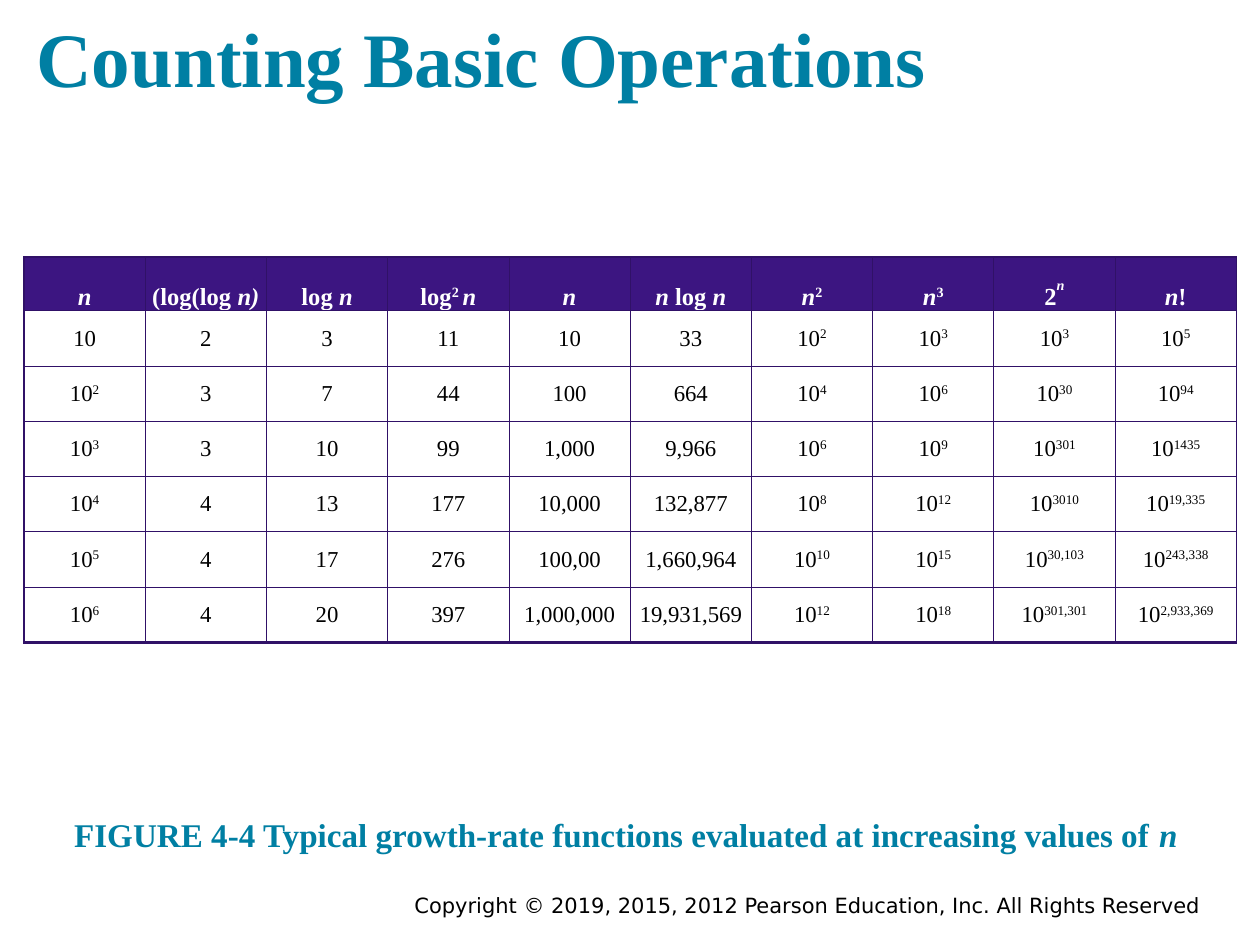
"""Build a slide with a table of growth-rate functions."""
from dataclasses import dataclass
from typing import Any, NamedTuple

from lxml import etree
from pptx import Presentation
from pptx import util as u
from pptx.dml.color import RGBColor
from pptx.enum import text
from pptx.oxml import ns


@dataclass(frozen=True)
class Theme:
    serif: str = "Times New Roman"
    sans: str = "DejaVu Sans"
    heading: str = "007FA3"
    ink: str = "000000"
    header_text: str = "FFFFFF"
    header_fill: str = "3C1581"
    border: str = "301167"
    title_size: float = 44
    caption_size: float = 18.9
    copyright_size: float = 12
    header_size: float = 14
    body_size: float = 13
    raised: int = 32
    raised_high: int = 61


class Piece(NamedTuple):
    text: str
    italic: bool = False
    raised: int = 0


class Style(NamedTuple):
    name: str
    size: float
    color: str
    bold: bool = False


@dataclass(frozen=True)
class Label:
    pieces: list[Piece]
    box: tuple[float, float, float, float]
    style: Style
    frame_format: dict[str, Any]
    inset: float
    alignment: text.PP_ALIGN = text.PP_ALIGN.LEFT


THEME = Theme()
HEADING = {"vertical_anchor": text.MSO_ANCHOR.BOTTOM, "auto_size": text.MSO_AUTO_SIZE.NONE}
GROWING = {"vertical_anchor": text.MSO_ANCHOR.TOP, "auto_size": text.MSO_AUTO_SIZE.SHAPE_TO_FIT_TEXT}
N = Piece("n", True)

LABELS = [
    Label([Piece("Copyright © 2019, 2015, 2012 Pearson Education, Inc. All Rights Reserved")],
          (126, 506.2, 563.8, 22.3), Style(THEME.sans, THEME.copyright_size, THEME.ink),
          GROWING, 3.6, text.PP_ALIGN.RIGHT),
    Label([Piece("Counting Basic Operations")], (13.7, 0, 670.3, 66.2),
          Style(THEME.serif, THEME.title_size, THEME.heading, True), HEADING, 7.2),
    Label([Piece("FIGURE 4-4 Typical growth-rate functions evaluated at increasing values of "), N],
          (35.3, 449.3, 648, 46.1),
          Style(THEME.serif, THEME.caption_size, THEME.heading, True), HEADING, 7.2),
]

HEADER = [
    [N],
    [Piece("(log(log "), Piece("n)", True)],
    [Piece("log "), N],
    [Piece("log"), Piece("2 ", raised=THEME.raised), N],
    [N],
    [Piece("n ", True), Piece("log "), N],
    [N, Piece("2", raised=THEME.raised)],
    [N, Piece("3", raised=THEME.raised)],
    [Piece("2"), Piece("n", True, THEME.raised_high)],
    [N, Piece("!")],
]

BODY = [
    "10 2 3 11 10 33 10^2 10^3 10^3 10^5",
    "10^2 3 7 44 100 664 10^4 10^6 10^30 10^94",
    "10^3 3 10 99 1,000 9,966 10^6 10^9 10^301 10^1435",
    "10^4 4 13 177 10,000 132,877 10^8 10^12 10^3010 10^19,335",
    "10^5 4 17 276 100,00 1,660,964 10^10 10^15 10^30,103 10^243,338",
    "10^6 4 20 397 1,000,000 19,931,569 10^12 10^18 10^301,301 10^2,933,369",
]

TABLE_LEFT, TABLE_TOP = 13.7, 146.9
COLUMN_WIDTH, HEADER_HEIGHT, ROW_HEIGHT = 69.3, 30.7, 31.6


def apply(target: Any, values: dict[str, Any]) -> None:
    """Set each named attribute on the target."""
    for name, value in values.items():
        setattr(target, name, value)


def margins(inset: float) -> dict[str, Any]:
    """Return equal margins for all four sides."""
    return {f"margin_{side}": u.Pt(inset) for side in ("left", "top", "right", "bottom")}


def write(paragraph: Any, pieces: list[Piece], style: Style, alignment: text.PP_ALIGN) -> None:
    """Write styled pieces into a paragraph."""
    paragraph.alignment = alignment
    for piece in pieces:
        run = paragraph.add_run()
        run.text = piece.text
        apply(run.font, {"name": style.name, "size": u.Pt(style.size),
                         "bold": style.bold, "italic": piece.italic})
        run.font.color.rgb = RGBColor.from_string(style.color)
        if piece.raised:
            run.font._element.set("baseline", str(piece.raised * 1000))


def add_label(slide: Any, label: Label) -> None:
    """Add a text box to the slide."""
    frame = slide.shapes.add_textbox(*map(u.Pt, label.box)).text_frame
    apply(frame, {"word_wrap": True, **label.frame_format, **margins(label.inset)})
    write(frame.paragraphs[0], label.pieces, label.style, label.alignment)


def set_borders(cell: Any, widths: dict[str, float]) -> None:
    """Draw solid cell borders with the given widths."""
    properties = cell._tc.get_or_add_tcPr()
    for side, width in widths.items():
        line = etree.SubElement(properties, ns.qn(f"a:ln{side}"), w=str(u.Pt(width)))
        fill = etree.SubElement(line, ns.qn("a:solidFill"))
        etree.SubElement(fill, ns.qn("a:srgbClr"), val=THEME.border)


def parse_value(value: str) -> list[Piece]:
    """Split a value into its base and raised exponent."""
    base, _, exponent = value.partition("^")
    return [Piece(base)] + ([Piece(exponent, raised=THEME.raised)] if exponent else [])


def add_growth_table(slide: Any) -> None:
    """Add the table of growth rates."""
    rows = [HEADER] + [[parse_value(value) for value in line.split()] for line in BODY]
    last_row, last_column = len(rows) - 1, len(HEADER) - 1
    heights = [HEADER_HEIGHT] + [ROW_HEIGHT] * len(BODY)
    table = slide.shapes.add_table(
        len(rows), len(HEADER), u.Pt(TABLE_LEFT), u.Pt(TABLE_TOP),
        u.Pt(COLUMN_WIDTH * len(HEADER)), u.Pt(sum(heights))).table
    apply(table, {"first_row": False, "horz_banding": False})
    for column in table.columns:
        column.width = u.Pt(COLUMN_WIDTH)
    header_style = Style(THEME.serif, THEME.header_size, THEME.header_text, True)
    body_style = Style(THEME.serif, THEME.body_size, THEME.ink)
    for row_index, row in enumerate(rows):
        table.rows[row_index].height = u.Pt(heights[row_index])
        is_header = row_index == 0
        for column_index, pieces in enumerate(row):
            cell = table.cell(row_index, column_index)
            anchor = text.MSO_ANCHOR.BOTTOM if is_header else text.MSO_ANCHOR.MIDDLE
            apply(cell, {"vertical_anchor": anchor, **margins(0)})
            set_borders(cell, {
                "L": 1 if column_index == 0 else 0.5,
                "R": 1 if column_index == last_column and not is_header else 0.5,
                "T": 1 if is_header else 0.5,
                "B": 2 if row_index == last_row else 0.5,
            })
            if is_header:
                cell.fill.solid()
                cell.fill.fore_color.rgb = RGBColor.from_string(THEME.header_fill)
            else:
                cell.fill.background()
            write(cell.text_frame.paragraphs[0], pieces,
                  header_style if is_header else body_style, text.PP_ALIGN.CENTER)


def main() -> None:
    """Build and save the presentation."""
    presentation = Presentation()
    apply(presentation, {"slide_width": u.Pt(720), "slide_height": u.Pt(540)})
    slide = presentation.slides.add_slide(presentation.slide_layouts[6])
    for label in LABELS:
        add_label(slide, label)
    add_growth_table(slide)
    presentation.save("out.pptx")


if __name__ == "__main__":
    main()
